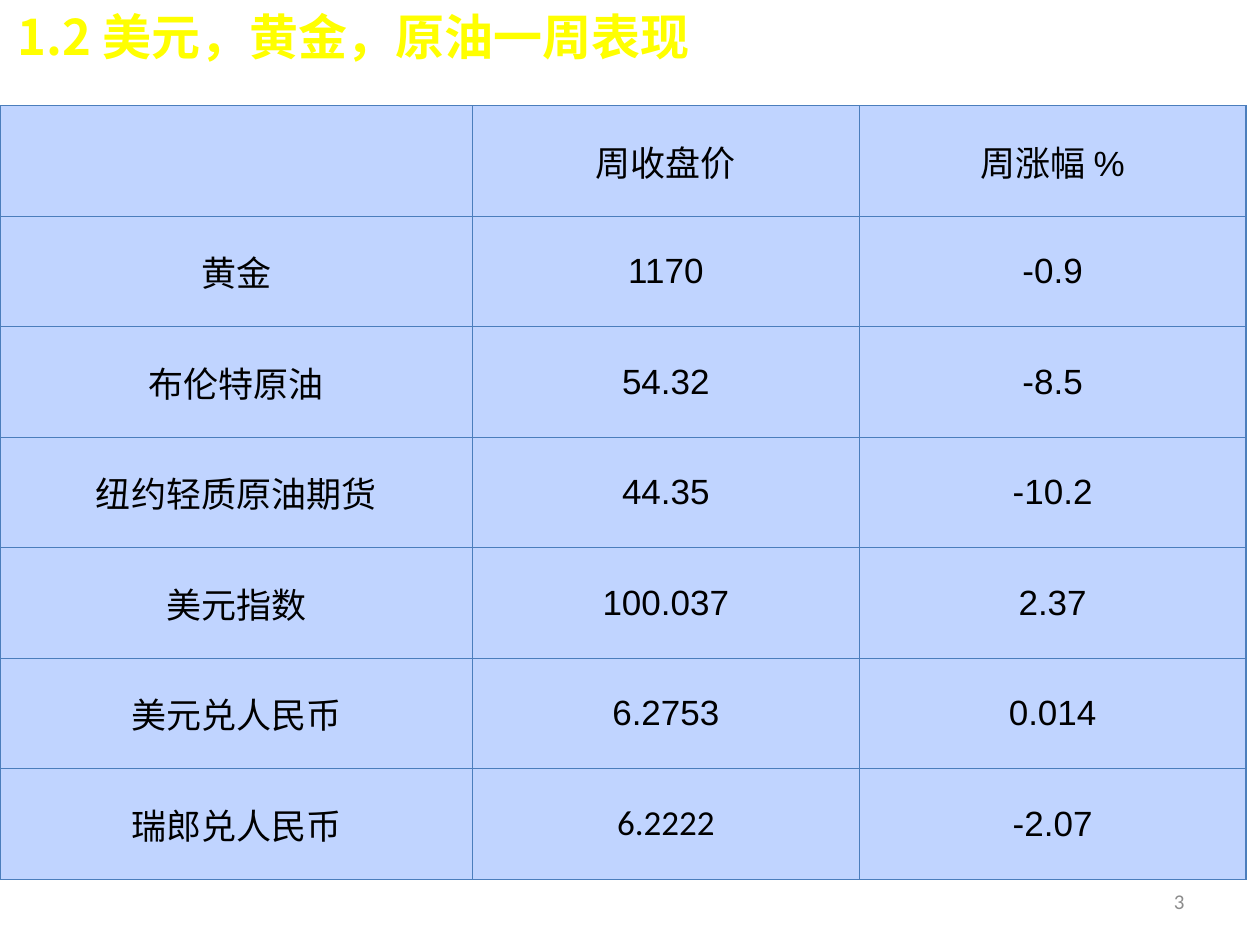
from dataclasses import dataclass

from lxml.etree import SubElement
from pptx import Presentation
from pptx.dml.color import RGBColor as RGB
from pptx.enum.text import MSO_ANCHOR as Anchor, MSO_AUTO_SIZE as AutoSize, PP_ALIGN as Align
from pptx.oxml.ns import qn
from pptx.util import Inches, Pt


@dataclass(frozen=True)
class Theme:
    title_color: str = "FFFF00"
    text_color: str = "000000"
    number_color: str = "8C8C8C"
    cell_fill: str = "C0D4FF"
    border_color: str = "4B7EBC"
    border_width: float = 0.75
    title_size: int = 28
    cell_size: int = 20
    number_size: int = 12
    chinese_font: str = "Noto Sans CJK SC"
    cell_font: str = "Arial"
    plain_font: str = "Calibri"


HEADER = ("", "周收盘价", "周涨幅 %")
QUOTES = (
    ("黄金", "1170", "-0.9"),
    ("布伦特原油", "54.32", "-8.5"),
    ("纽约轻质原油期货", "44.35", "-10.2"),
    ("美元指数", "100.037", "2.37"),
    ("美元兑人民币", "6.2753", "0.014"),
    ("瑞郎兑人民币", "6.2222", "-2.07"),
)
COLUMN_WIDTHS = (3.75, 3.07, 3.07)
TABLE_HEIGHT = 6.14
PLAIN_CELLS = {"瑞郎兑人民币", "6.2222"}


class SlideBuilder:
    def __init__(self, page, theme):
        self.page = page
        self.theme = theme

    def set_text(self, frame, text, font, size, color, align, bold=False):
        frame.text = text
        para = frame.paragraphs[0]
        para.alignment = align
        para.font.name = font
        para.font.size = Pt(size)
        para.font.bold = bold
        para.font.color.rgb = RGB.from_string(color)
        defaults = para._p.pPr.find(qn("a:defRPr"))
        SubElement(defaults, qn("a:ea"), typeface=self.theme.chinese_font)

    def add_title(self, text, left, top, width, height):
        title = self.page.shapes.title
        title.left, title.top = Inches(left), Inches(top)
        title.width, title.height = Inches(width), Inches(height)
        frame = title.text_frame
        frame.auto_size = AutoSize.NONE
        frame.vertical_anchor = Anchor.MIDDLE
        frame.margin_top = frame.margin_bottom = 0
        self.set_text(frame, text, self.theme.chinese_font, self.theme.title_size,
                      self.theme.title_color, Align.LEFT, bold=True)

    def add_page_number(self, number, left, top, width, height):
        box = self.page.shapes.add_textbox(
            Inches(left), Inches(top), Inches(width), Inches(height))
        frame = box.text_frame
        frame.word_wrap = True
        frame.vertical_anchor = Anchor.MIDDLE
        self.set_text(frame, str(number), self.theme.plain_font, self.theme.number_size,
                      self.theme.number_color, Align.RIGHT)

    def add_borders(self, cell):
        properties = cell._tc.get_or_add_tcPr()
        for side in ("lnL", "lnR", "lnT", "lnB"):
            line = SubElement(properties, qn(f"a:{side}"),
                              w=str(int(Pt(self.theme.border_width))))
            fill = SubElement(line, qn("a:solidFill"))
            SubElement(fill, qn("a:srgbClr"), val=self.theme.border_color)

    def fill_cell(self, cell, text):
        theme = self.theme
        cell.margin_left = cell.margin_right = cell.margin_top = cell.margin_bottom = 0
        cell.vertical_anchor = Anchor.MIDDLE
        self.add_borders(cell)
        cell.fill.solid()
        cell.fill.fore_color.rgb = RGB.from_string(theme.cell_fill)
        font = theme.plain_font if text in PLAIN_CELLS else theme.cell_font
        self.set_text(cell.text_frame, text, font, theme.cell_size,
                      theme.text_color, Align.CENTER)

    def add_table(self, rows, left, top, widths, height):
        table = self.page.shapes.add_table(
            len(rows), len(widths), Inches(left), Inches(top),
            Inches(sum(widths)), Inches(height)).table
        table.first_row = table.horz_banding = False
        for column, width in zip(table.columns, widths):
            column.width = Inches(width)
        for row, texts in zip(table.rows, rows):
            row.height = Inches(height / len(rows))
            for cell, text in zip(row.cells, texts):
                self.fill_cell(cell, text)


def main():
    deck = Presentation()
    deck.slide_width, deck.slide_height = Inches(10), Inches(7.5)
    title_only = deck.slide_layouts[5]
    builder = SlideBuilder(deck.slides.add_slide(title_only), Theme())
    builder.add_page_number(3, 7.17, 6.95, 2.33, 0.4)
    builder.add_title("1.2 美元，黄金，原油一周表现", 0.04, 0, 9.45, 0.57)
    builder.add_table((HEADER, *QUOTES), 0, 0.84, COLUMN_WIDTHS, TABLE_HEIGHT)
    deck.save("out.pptx")


if __name__ == "__main__":
    main()
